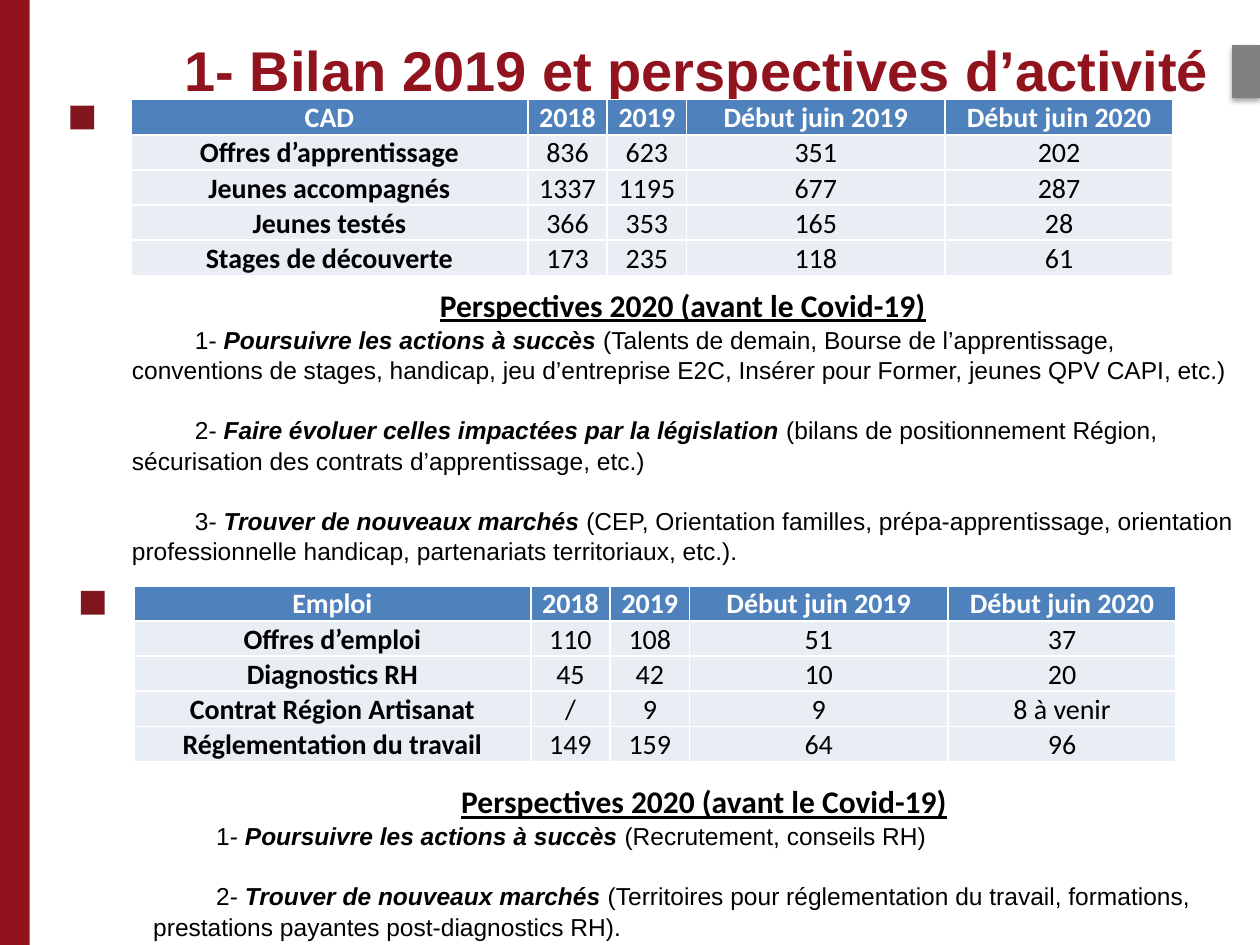
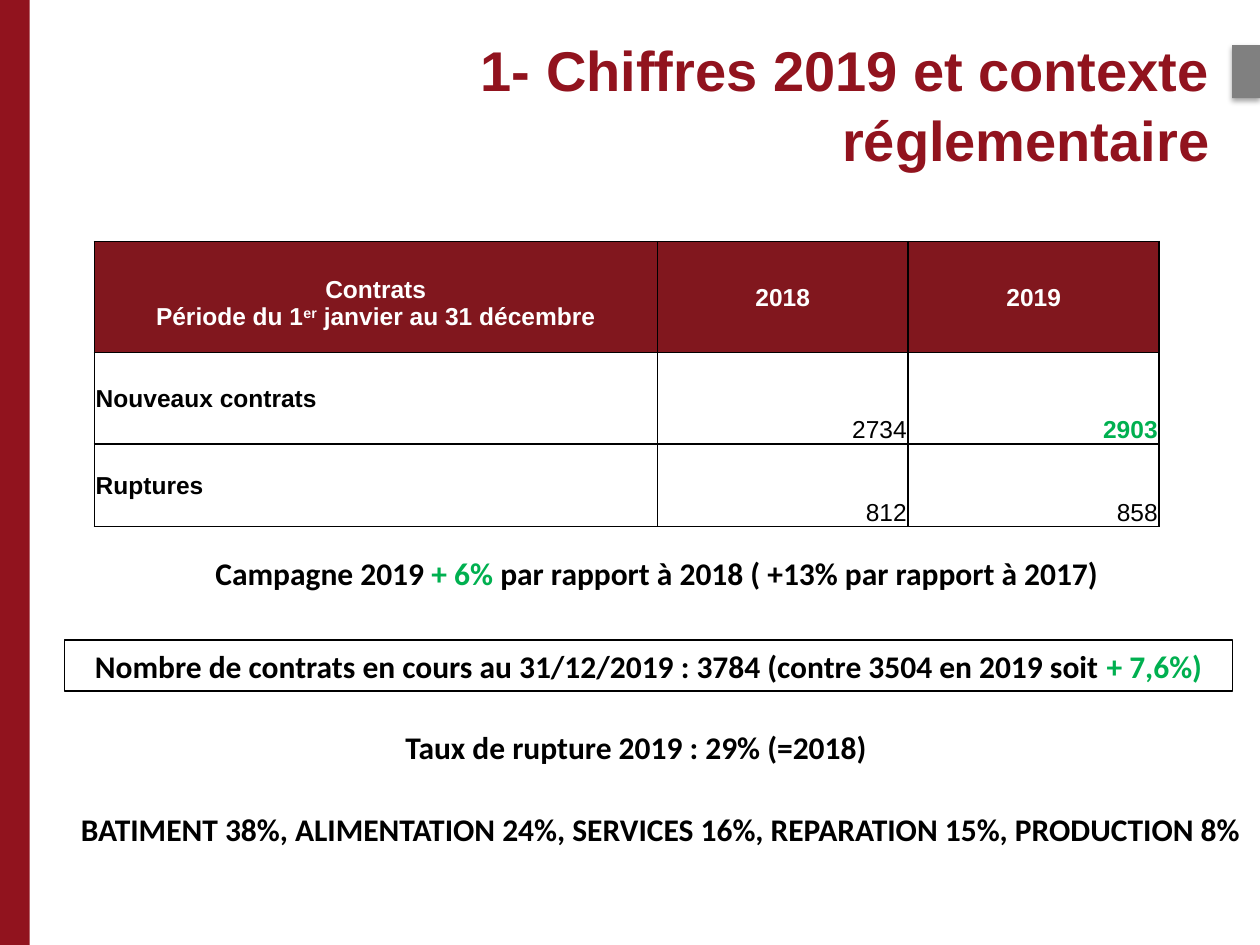
import pptx
import pptx.dml.color
import pptx.enum.shapes
import pptx.enum.text
import pptx.oxml
import pptx.oxml.ns
import pptx.util
from pptx.util import Cm

COLORS = {
    "band": "91131E", "dark_red": "81171E", "tab": "808080", "blue": "4F81BD",
    "pale": "E9EDF4", "white": "FFFFFF", "black": "000000", "green": "00B050",
}
ALIGN = pptx.enum.text.PP_ALIGN
ANCHOR = pptx.enum.text.MSO_ANCHOR
NS = pptx.oxml.ns.nsdecls("a")
ACTIVITY_COLUMNS = [8, 1.6, 1.6, 5.21, 4.6]
PERIODS = ["2018", "2019", "Début juin 2019", "Début juin 2020"]
BODY_SPACING = 1.04


def rgb(name):
    """Return the named palette colour."""
    return pptx.dml.color.RGBColor.from_string(COLORS[name])


def add_run(paragraph, text, font="Calibri", size=18, color="black", bold=True,
            italic=False, underline=False, superscript=False):
    """Append one formatted run to a paragraph."""
    run = paragraph.add_run()
    run.text = text
    run.font.name = font
    run.font.size = pptx.util.Pt(size)
    run.font.color.rgb = rgb(color)
    run.font.bold = bold
    run.font.italic = italic
    run.font.underline = underline
    if superscript:
        run.font._element.set("baseline", "30000")


def add_block(slide, left, top, width, height, fill):
    """Draw a plain filled rectangle."""
    block = slide.shapes.add_shape(pptx.enum.shapes.MSO_SHAPE.RECTANGLE,
                                   Cm(left), Cm(top), Cm(width), Cm(height))
    block.shadow.inherit = False
    block.line.fill.background()
    block.fill.solid()
    block.fill.fore_color.rgb = rgb(fill)
    return block


def add_marker(slide, left, top):
    """Draw the small square beside a table."""
    add_block(slide, left, top, 0.48, 0.48, "dark_red")


def add_text_frame(slide, left, top, width, height):
    """Add a wrapping text box and return its frame."""
    frame = slide.shapes.add_textbox(Cm(left), Cm(top), Cm(width), Cm(height)).text_frame
    frame.word_wrap = True
    return frame


def add_framed_slide(deck, title, title_height):
    """Add a slide with the side band, the title and the grey tab."""
    slide = deck.slides.add_slide(deck.slide_layouts[6])
    add_block(slide, 0, 0, 0.6, 19.05, "band")
    heading = add_text_frame(slide, 2.57, 0.53, 22.07, title_height).paragraphs[0]
    heading.alignment = ALIGN.RIGHT
    heading.line_spacing = BODY_SPACING
    add_run(heading, title, "Arial", 32, "band")
    tab = add_block(slide, 24.84, 0.91, 0.56, 1.07, "tab")
    effects = tab._element.spPr.find(pptx.oxml.ns.qn("a:effectLst"))
    effects.append(pptx.oxml.parse_xml(
        f'<a:outerShdw {NS} blurRad="39370" dist="22860" dir="5400000" rotWithShape="0">'
        f'<a:srgbClr val="{COLORS["black"]}"><a:alpha val="35000"/></a:srgbClr></a:outerShdw>'))
    return slide


def add_grid(slide, left, top, columns, rows):
    """Add a table with the given column widths and row heights."""
    grid = slide.shapes.add_table(len(rows), len(columns), Cm(left), Cm(top),
                                  Cm(sum(columns)), Cm(sum(rows))).table
    for column, width in zip(grid.columns, columns):
        column.width = Cm(width)
    for row, height in zip(grid.rows, rows):
        row.height = Cm(height)
    return grid


def fill_cell(cell, lines, fill, border, anchor, align, **style):
    """Set the borders, fill and text lines (lists of runs) of a cell."""
    properties = cell._tc.get_or_add_tcPr()
    for side in "LRTB":
        properties.append(pptx.oxml.parse_xml(
            f'<a:ln{side} {NS} w="12700"><a:solidFill><a:srgbClr val="{COLORS[border]}"/>'
            f'</a:solidFill></a:ln{side}>'))
    cell.fill.solid()
    cell.fill.fore_color.rgb = rgb(fill)
    cell.margin_left = cell.margin_right = cell.margin_top = Cm(0.03)
    cell.margin_bottom = 0
    cell.vertical_anchor = anchor
    for index, runs in enumerate(lines):
        frame = cell.text_frame
        paragraph = frame.add_paragraph() if index else frame.paragraphs[0]
        paragraph.alignment = align
        for text, overrides in runs:
            add_run(paragraph, text, **{**style, **overrides})


def add_activity_table(slide, left, top, subject, records):
    """Add a blue activity table by period."""
    content = [[subject, *PERIODS], *records]
    grid = add_grid(slide, left, top, ACTIVITY_COLUMNS, [0.7] * len(content))
    for r, record in enumerate(content):
        for c, value in enumerate(record):
            fill_cell(grid.cell(r, c), [[(value, {})]], "pale" if r else "blue", "white",
                      ANCHOR.BOTTOM, ALIGN.CENTER, size=16,
                      color="black" if r else "white", bold=r == 0 or c == 0)


def add_outlook(slide, left, top, height, actions):
    """Add the outlook heading and its numbered actions."""
    frame = add_text_frame(slide, left, top, 22.71, height)
    heading = frame.paragraphs[0]
    heading.alignment = ALIGN.CENTER
    heading.line_spacing = 1.6
    add_run(heading, "Perspectives 2020 (avant le Covid-19)", underline=True)
    for number, (action, details) in enumerate(actions, 1):
        paragraph = frame.add_paragraph()
        paragraph._p.get_or_add_pPr().set("indent", str(Cm(1.27)))
        paragraph.line_spacing = BODY_SPACING
        paragraph.space_before = pptx.util.Pt(16.8 if number > 1 else 0)
        add_run(paragraph, f"{number}- ", "Arial", 14, bold=False)
        add_run(paragraph, f"{action} ", "Arial", 14, italic=True)
        add_run(paragraph, f"({details}", "Arial", 14, bold=False)


def add_contract_table(slide):
    """Add the table of new and broken contracts."""
    grid = add_grid(slide, 1.9, 4.87, [11.35, 5.06, 5.06], [2.24, 1.84, 1.66])
    period = [("Période du 1", {}), ("er", {"superscript": True}),
              (" janvier au 31 décembre", {})]
    headers = [[[("Contrats", {})], period], [[("2018", {})]], [[("2019", {})]]]
    for c, lines in enumerate(headers):
        fill_cell(grid.cell(0, c), lines, "dark_red", "black", ANCHOR.MIDDLE,
                  ALIGN.CENTER, font="Arial", size=14, color="white")
    grid.cell(0, 0).margin_top = Cm(0.25)
    records = [["Nouveaux contrats", "2734", "2903"], ["Ruptures", "812", "858"]]
    for r, record in enumerate(records, 1):
        for c, value in enumerate(record):
            rising = value == "2903"
            fill_cell(grid.cell(r, c), [[(value, {})]], "white", "black",
                      ANCHOR.BOTTOM if c else ANCHOR.MIDDLE,
                      ALIGN.RIGHT if c else ALIGN.LEFT, font="Arial", size=14,
                      color="green" if rising else "black", bold=rising or c == 0)


def add_key_figure(slide, left, top, width, runs, outlined=False):
    """Add a centred line of (text, colour) runs, boxed if outlined."""
    if outlined:
        box = add_block(slide, left, top, width, 1.03, "white")
        box.fill.background()
        box.line.color.rgb = rgb("black")
        box.line.width = pptx.util.Pt(0.75)
        frame = box.text_frame
        frame.word_wrap = True
    else:
        frame = add_text_frame(slide, left, top, width, 1.03)
    paragraph = frame.paragraphs[0]
    paragraph.alignment = ALIGN.CENTER
    for text, color in runs:
        add_run(paragraph, text, color=color)


def build_activity_slide(deck):
    """Build the slide on activity and outlook."""
    slide = add_framed_slide(deck, "1- Bilan 2019 et perspectives d’activité", 3)
    add_marker(slide, 1.42, 2.13)
    add_activity_table(slide, 2.64, 2.01, "CAD", [
        ["Offres d’apprentissage", "836", "623", "351", "202"],
        ["Jeunes accompagnés", "1337", "1195", "677", "287"],
        ["Jeunes testés", "366", "353", "165", "28"],
        ["Stages de découverte", "173", "235", "118", "61"],
    ])
    add_outlook(slide, 2.41, 5.18, 7.14, [
        ("Poursuivre les actions à succès",
         "Talents de demain, Bourse de l’apprentissage, conventions de stages, handicap, "
         "jeu d’entreprise E2C, Insérer pour Former, jeunes QPV CAPI, etc.)"),
        ("Faire évoluer celles impactées par la législation",
         "bilans de positionnement Région, sécurisation des contrats d’apprentissage, etc.)"),
        ("Trouver de nouveaux marchés",
         "CEP, Orientation familles, prépa-apprentissage, orientation professionnelle "
         "handicap, partenariats territoriaux, etc.)."),
    ])
    add_activity_table(slide, 2.7, 11.81, "Emploi", [
        ["Offres d’emploi", "110", "108", "51", "37"],
        ["Diagnostics RH", "45", "42", "10", "20"],
        ["Contrat Région Artisanat", "/", "9", "9", "8 à venir"],
        ["Réglementation du travail", "149", "159", "64", "96"],
    ])
    add_marker(slide, 1.63, 11.91)
    add_outlook(slide, 2.84, 15.19, 3.86, [
        ("Poursuivre les actions à succès", "Recrutement, conseils RH)"),
        ("Trouver de nouveaux marchés",
         "Territoires pour réglementation du travail, formations, "
         "prestations payantes post-diagnostics RH)."),
    ])


def build_contract_slide(deck):
    """Build the slide on contract figures."""
    slide = add_framed_slide(deck, "1- Chiffres 2019 et contexte réglementaire", 4.37)
    add_contract_table(slide)
    add_key_figure(slide, 3.91, 11.05, 18.67, [
        ("Campagne 2019 ", "black"), ("+ 6% ", "green"),
        ("par rapport à 2018 ( +13% par rapport à 2017)", "black")])
    add_key_figure(slide, 2.69, 14.55, 20.27, [
        ("Taux de rupture 2019 : 29% (=2018)", "black")])
    add_key_figure(slide, 0.91, 16.21, 24.82, [
        ("BATIMENT 38%, ALIMENTATION 24%, SERVICES 16%, REPARATION 15%, PRODUCTION 8%",
         "black")])
    add_key_figure(slide, 1.3, 12.9, 23.55, [
        ("Nombre de contrats en cours au 31/12/2019 : 3784 (contre 3504 en 2019 soit ",
         "black"), ("+ 7,6%)", "green")], outlined=True)


def main():
    """Build and save the deck."""
    deck = pptx.Presentation()
    deck.slide_width, deck.slide_height = Cm(25.4), Cm(19.05)
    build_activity_slide(deck)
    build_contract_slide(deck)
    deck.save("out.pptx")


if __name__ == "__main__":
    main()
